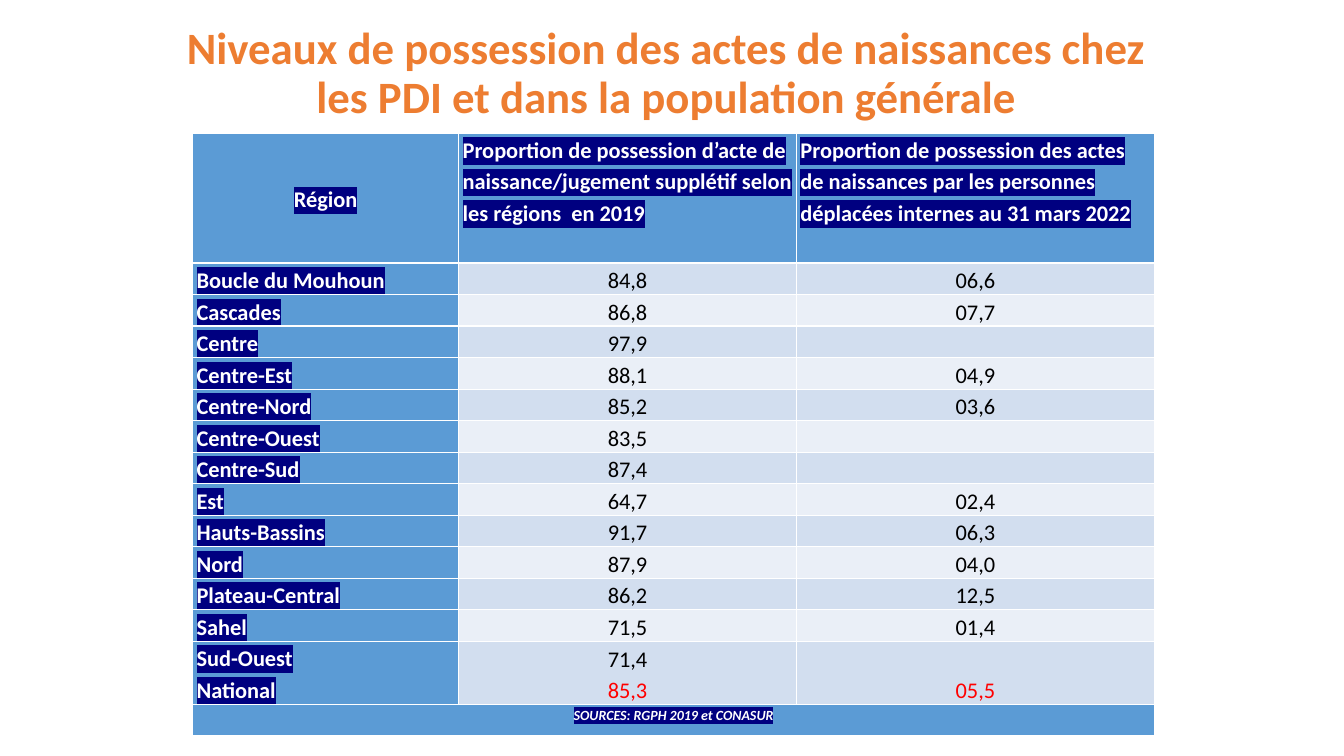
from lxml.etree import SubElement
from pptx import Presentation
from pptx.dml.color import RGBColor
from pptx.enum.text import MSO_ANCHOR as Anchor, PP_ALIGN as Align
from pptx.oxml.ns import qn
from pptx.util import Inches, Pt

TITLE = ("Niveaux de possession des actes de naissances chez "
         "les PDI et dans la population générale")
HEADS = [
    "Région",
    "Proportion de possession d’acte de naissance/jugement supplétif selon "
    "les régions  en 2019",
    "Proportion de possession des actes de naissances par les personnes "
    "déplacées internes au 31 mars 2022",
]
REGIONS = [
    ("Boucle du Mouhoun", "84,8", "06,6"),
    ("Cascades", "86,8", "07,7"),
    ("Centre", "97,9", ""),
    ("Centre-Est", "88,1", "04,9"),
    ("Centre-Nord", "85,2", "03,6"),
    ("Centre-Ouest", "83,5", ""),
    ("Centre-Sud", "87,4", ""),
    ("Est", "64,7", "02,4"),
    ("Hauts-Bassins", "91,7", "06,3"),
    ("Nord", "87,9", "04,0"),
    ("Plateau-Central", "86,2", "12,5"),
    ("Sahel", "71,5", "01,4"),
    ("Sud-Ouest\nNational", "71,4\n85,3", "05,5"),
]
NATIONAL = ("85,3", "05,5")
SOURCE = "SOURCES: RGPH 2019 et CONASUR"

COLS = [2.64, 3.35, 3.55]
HEAD_H, ROW_H, LAST_H = 1.29, 0.31, 0.63

ORANGE = RGBColor(0xED, 0x7D, 0x31)
BLUE = RGBColor(0x5B, 0x9B, 0xD5)
BANDS = [RGBColor(0xD2, 0xDE, 0xEF), RGBColor(0xEA, 0xEF, 0xF7)]
NAVY = RGBColor(0x00, 0x00, 0x80)
WHITE = RGBColor(0xFF, 0xFF, 0xFF)
BLACK = RGBColor(0x00, 0x00, 0x00)
RED = RGBColor(0xFF, 0x00, 0x00)

LABEL = {"name": "Calibri", "size": Pt(16), "bold": True}
VALUE = LABEL | {"bold": False}
CREDIT = LABEL | {"size": Pt(10), "italic": True}


def style(run, font, color):
    for key, val in font.items():
        setattr(run.font, key, val)
    run.font.color.rgb = color


def mark(run, color):
    """Put a highlight behind the run's text."""
    fill = run.font._element.find(qn("a:solidFill"))
    light = SubElement(run.font._element, qn("a:highlight"))
    SubElement(light, qn("a:srgbClr")).set("val", str(color))
    fill.addnext(light)


def fill_cell(cell, text, back, font, align=Align.LEFT, anchor=Anchor.TOP):
    cell.fill.solid()
    cell.fill.fore_color.rgb = back
    cell.margin_left = cell.margin_right = Inches(0.04)
    cell.margin_top = cell.margin_bottom = 0
    cell.vertical_anchor = anchor
    if not text:
        return
    cell.text = text
    for par in cell.text_frame.paragraphs:
        par.alignment, par.line_spacing = align, 1.15
        for run in par.runs:
            if back == BLUE:
                style(run, font, WHITE)
                mark(run, NAVY)
            else:
                style(run, font, RED if run.text in NATIONAL else BLACK)


def add_title(slide):
    title = slide.shapes.title
    title.left, title.top = Inches(1.53), Inches(0.25)
    title.width, title.height = Inches(10.16), Inches(0.98)
    frame = title.text_frame
    frame.text = TITLE
    frame.word_wrap = True
    frame.vertical_anchor = Anchor.MIDDLE
    par = frame.paragraphs[0]
    par.alignment, par.line_spacing = Align.CENTER, 0.9
    style(par.runs[0], LABEL | {"size": Pt(32)}, ORANGE)


def add_rates(slide):
    heights = [HEAD_H] + [ROW_H] * (len(REGIONS) - 1) + [LAST_H, ROW_H]
    table = slide.shapes.add_table(
        len(heights), len(COLS), Inches(1.91), Inches(1.32),
        Inches(sum(COLS)), Inches(sum(heights))).table
    table.first_col = True
    for col, width in zip(table.columns, COLS):
        col.width = Inches(width)
    for row, height in zip(table.rows, heights):
        row.height = Inches(height)

    for c, head in enumerate(HEADS):
        place = (Align.LEFT, Anchor.TOP) if c else (Align.CENTER, Anchor.MIDDLE)
        fill_cell(table.cell(0, c), head, BLUE, LABEL, *place)
    for r, (region, *rates) in enumerate(REGIONS, 1):
        fill_cell(table.cell(r, 0), region, BLUE, LABEL)
        for c, rate in enumerate(rates, 1):
            fill_cell(table.cell(r, c), rate, BANDS[(r - 1) % 2], VALUE,
                      Align.CENTER, Anchor.BOTTOM)
    last = len(heights) - 1
    table.cell(last, 0).merge(table.cell(last, len(COLS) - 1))
    fill_cell(table.cell(last, 0), SOURCE, BLUE, CREDIT, Align.CENTER)


def main():
    prs = Presentation()
    prs.slide_width, prs.slide_height = Inches(13.33), Inches(7.5)
    slide = prs.slides.add_slide(prs.slide_layouts[5])
    add_title(slide)
    add_rates(slide)
    prs.save("out.pptx")


if __name__ == "__main__":
    main()
